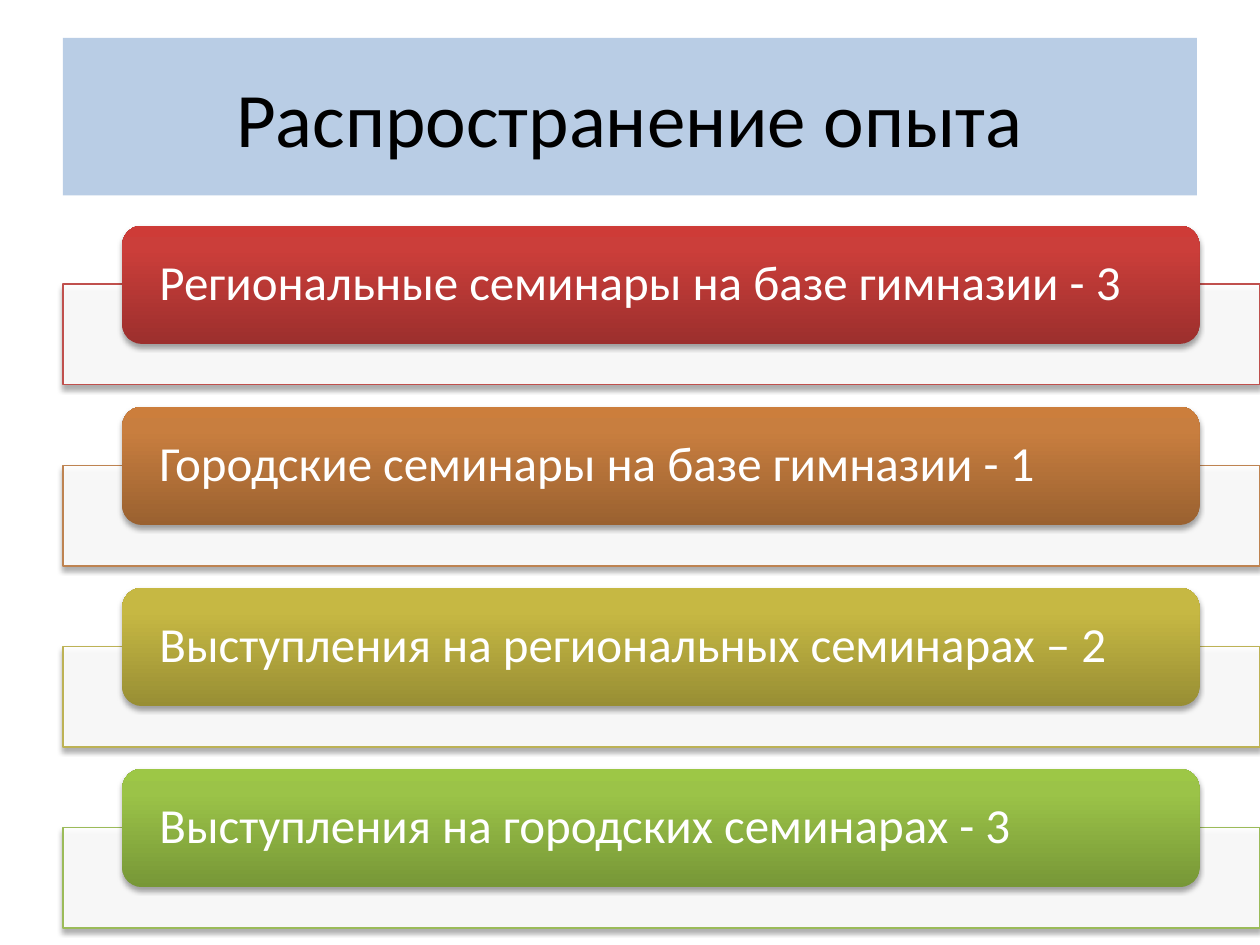
from dataclasses import dataclass

import pptx
import pptx.dml.color
import pptx.enum.shapes
import pptx.enum.text
import pptx.oxml.ns
import pptx.oxml.xmlchemy
import pptx.util
from lxml import etree
from pptx.util import Inches

qn = pptx.oxml.ns.qn
SHAPES = pptx.enum.shapes.MSO_SHAPE
ALIGN = pptx.enum.text.PP_ALIGN


@dataclass(frozen=True)
class Theme:
    font: str = "Calibri"
    title_size: int = 44
    item_size: int = 28
    title_fill: str = "B9CDE5"
    title_text: str = "000000"
    item_text: str = "FFFFFF"
    strip_fill: str = "FFFFFF"
    shadow: str = "000000"


@dataclass(frozen=True)
class Item:
    text: str
    outline: str
    gradient: tuple[str, str, str]  # from bottom to top


THEME = Theme()
ITEMS = [
    Item("Региональные семинары на базе гимназии - 3", "C0504D",
         ("9C2F2D", "CB3E3A", "CE3B37")),
    Item("Городские семинары на базе гимназии - 1", "BE8351",
         ("9A6130", "C87E3F", "CC7E3C")),
    Item("Выступления на региональных семинарах – 2", "BDB255",
         ("988E34", "C6B843", "C9BB41")),
    Item("Выступления на городских семинарах - 3", "9BBB59",
         ("779737", "9BC348", "9DC746")),
]
STOPS = (0, 80, 100)
FIRST_TOP, ITEM_PITCH, STRIP_DROP = 1.79, 1.437, 0.465


def rgb(color: str) -> pptx.dml.color.RGBColor:
    return pptx.dml.color.RGBColor.from_string(color)


def add_color(parent, color: str, alpha: int = 100) -> None:
    node = etree.SubElement(parent, qn("a:srgbClr"), val=color)
    if alpha < 100:
        etree.SubElement(node, qn("a:alpha"), val=str(alpha * 1000))


def add_plain_shape(slide, kind, left: float, top: float, width: float, height: float):
    shape = slide.shapes.add_shape(
        kind, Inches(left), Inches(top), Inches(width), Inches(height))
    shape.line.fill.background()
    shape.shadow.inherit = False
    return shape


def add_drop_shadow(shape) -> None:
    effects = shape._element.spPr.find(qn("a:effectLst"))
    shadow = etree.SubElement(
        effects, qn("a:outerShdw"), blurRad=str(pptx.util.Pt(3.1)),
        dist=str(pptx.util.Pt(1.8)), dir="5400000", rotWithShape="0")
    add_color(shadow, THEME.shadow, 35)


def fill_gradient(shape, colors: tuple[str, str, str]) -> None:
    shape.fill.gradient()
    shape.fill.gradient_angle = 90
    stops = shape._element.spPr.find(qn("a:gradFill")).find(qn("a:gsLst"))
    for stop in list(stops):
        stops.remove(stop)
    for position, color in zip(STOPS, colors):
        add_color(etree.SubElement(stops, qn("a:gs"), pos=str(position * 1000)), color)


def write_text(shape, text: str, size: int, color: str, align):
    frame = shape.text_frame
    frame.word_wrap = True
    frame.vertical_anchor = pptx.enum.text.MSO_ANCHOR.MIDDLE
    paragraph = frame.paragraphs[0]
    paragraph.text = text
    paragraph.alignment = align
    paragraph.font.name = THEME.font
    paragraph.font.size = pptx.util.Pt(size)
    paragraph.font.color.rgb = rgb(color)
    return frame


def add_title(slide, text: str) -> None:
    banner = add_plain_shape(slide, SHAPES.RECTANGLE, 0.5, 0.3, 9, 1.25)
    banner.fill.solid()
    banner.fill.fore_color.rgb = rgb(THEME.title_fill)
    write_text(banner, text, THEME.title_size, THEME.title_text, ALIGN.CENTER)


def add_item(slide, item: Item, top: float) -> None:
    """Draw the outlined strip and the gradient label that overlaps it."""
    strip = add_plain_shape(slide, SHAPES.RECTANGLE, 0.5, top + STRIP_DROP, 9.5, 0.8)
    strip.fill.solid()
    strip.fill.fore_color.rgb = rgb(THEME.strip_fill)
    fill_color = strip._element.spPr.find(qn("a:solidFill")).find(qn("a:srgbClr"))
    etree.SubElement(fill_color, qn("a:alpha"), val="90000")
    strip.line.color.rgb = rgb(item.outline)
    strip.line.width = pptx.util.Pt(0.75)
    add_drop_shadow(strip)

    label = add_plain_shape(slide, SHAPES.ROUNDED_RECTANGLE, 0.97, top, 8.55, 0.94)
    fill_gradient(label, item.gradient)
    add_drop_shadow(label)
    frame = write_text(label, item.text, THEME.item_size, THEME.item_text, ALIGN.LEFT)
    frame.margin_left = frame.margin_right = Inches(0.25)
    frame.margin_top = frame.margin_bottom = 0
    frame.paragraphs[0].line_spacing = 0.9


def main() -> None:
    deck = pptx.Presentation()
    deck.slide_width, deck.slide_height = Inches(10), Inches(7.5)
    slide = deck.slides.add_slide(deck.slide_layouts[6])
    add_title(slide, "Распространение опыта")
    for index, item in enumerate(ITEMS):
        add_item(slide, item, FIRST_TOP + index * ITEM_PITCH)
    deck.save("out.pptx")


if __name__ == "__main__":
    main()
